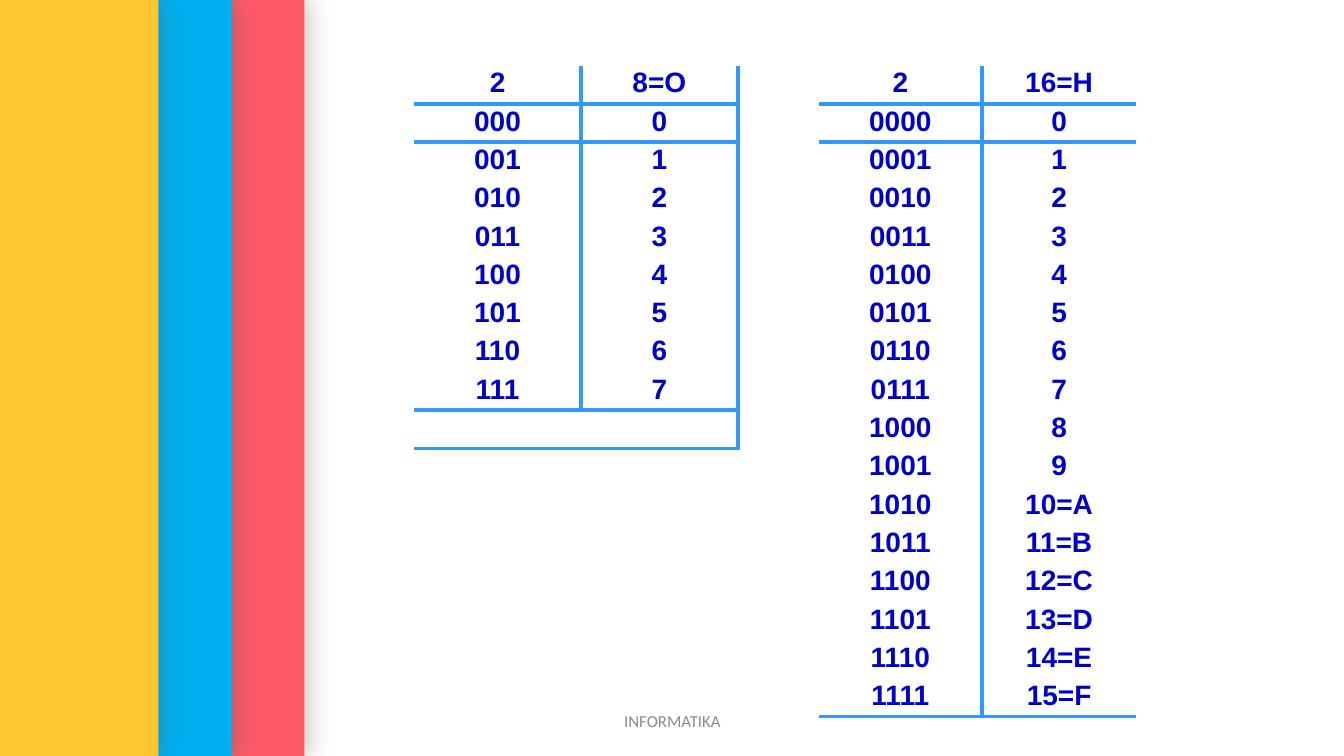
import dataclasses

import pptx
import pptx.dml.color
import pptx.enum.shapes
import pptx.enum.text
import pptx.oxml
import pptx.oxml.ns
import pptx.util
from lxml import etree

Inches = pptx.util.Inches
Pt = pptx.util.Pt


@dataclasses.dataclass(frozen=True)
class Theme:
    coral: str = "FF5969"
    sky: str = "00B0F0"
    amber: str = "FEC630"
    shade: str = "595959"
    paper: str = "FFFFFF"
    digits: str = "0000CC"
    rule: str = "3399FF"
    caption: str = "8C8C8C"
    table_font: str = "Arial"
    caption_font: str = "Calibri"
    table_size: int = 20
    caption_size: int = 12
    rule_width: int = 3


THEME = Theme()
NO_GRID_STYLE = "{2D5ABB26-0587-4C30-8999-92F81FD0307C}"
COLUMN_WIDTHS = (1.65, 1.56, 0.8, 1.62, 1.53)
ROW_COUNT = 18
GAP_COLUMN = 2
GAP_LAST_ROW = 9


def rgb(value):
    return pptx.dml.color.RGBColor.from_string(value)


def add_span(para, text, font, size, color, bold=False):
    span = para.add_run()
    span.text = text
    span.font.name = font
    span.font.size = Pt(size)
    span.font.bold = bold
    span.font.color.rgb = rgb(color)


def add_band(page, left, width, height, color):
    band = page.shapes.add_shape(
        pptx.enum.shapes.MSO_SHAPE.RECTANGLE,
        Inches(left), 0, Inches(width), Inches(height))
    band.fill.solid()
    band.fill.fore_color.rgb = rgb(color)
    band.line.fill.background()
    band.shadow.inherit = False
    effects = band.fill._xPr.find(pptx.oxml.ns.qn("a:effectLst"))
    effects.append(pptx.oxml.parse_xml(
        f'<a:outerShdw {pptx.oxml.ns.nsdecls("a")} blurRad="{Pt(17)}" '
        f'dist="{Pt(3)}" dir="0" algn="l" rotWithShape="0">'
        f'<a:srgbClr val="{THEME.shade}"><a:alpha val="35000"/></a:srgbClr>'
        '</a:outerShdw>'))


def add_bands(page, height):
    add_band(page, -9.62, 12.64, height, THEME.coral)
    add_band(page, -8.58, 10.88, height, THEME.sky)
    add_band(page, -8.73, 10.3, height, THEME.amber)


def add_borders(cell, sides):
    properties = cell._tc.get_or_add_tcPr()
    for side in "LRTB":
        if side in sides:
            properties.append(pptx.oxml.parse_xml(
                f'<a:ln{side} {pptx.oxml.ns.nsdecls("a")} w="{Pt(THEME.rule_width)}">'
                f'<a:solidFill><a:srgbClr val="{THEME.rule}"/></a:solidFill>'
                f'</a:ln{side}>'))


def fill_code_columns(table, first_column, bits, codes):
    last_row = len(codes)
    pairs = [("2", codes[0])]
    pairs += [(f"{number:0{bits}b}", code) for number, code in enumerate(codes[1:])]
    for row in range(last_row + 1):
        horizontal = ""
        if row in (1, last_row):
            horizontal += "T"
        if row in (0, last_row - 1):
            horizontal += "B"
        for offset, vertical in enumerate("RL"):
            cell = table.cell(row, first_column + offset)
            add_borders(cell, horizontal + (vertical if row < last_row else ""))
            if row < last_row:
                para = cell.text_frame.paragraphs[0]
                para.alignment = pptx.enum.text.PP_ALIGN.CENTER
                add_span(para, pairs[row][offset], THEME.table_font,
                         THEME.table_size, THEME.digits, True)


def add_code_table(page, left, top, width, height):
    table = page.shapes.add_table(
        ROW_COUNT, len(COLUMN_WIDTHS), Inches(left), Inches(top),
        Inches(width), Inches(height)).table
    table.first_row = False
    table.horz_banding = False
    style = table._tbl.tblPr.find(pptx.oxml.ns.qn("a:tableStyleId"))
    style.text = NO_GRID_STYLE
    for column, column_width in zip(table.columns, COLUMN_WIDTHS):
        column.width = Inches(column_width)
    for row in table.rows:
        row.height = Inches(height / ROW_COUNT)
    octal = ["8=O"] + [str(number) for number in range(8)]
    hexadecimal = ["16=H"] + [str(number) for number in range(10)]
    hexadecimal += [f"{number}={number:X}" for number in range(10, 16)]
    fill_code_columns(table, 0, 3, octal)
    fill_code_columns(table, GAP_COLUMN + 1, 4, hexadecimal)
    for cell in table.iter_cells():
        cell.margin_left = cell.margin_right = Inches(0.04)
        cell.margin_top = cell.margin_bottom = Inches(0.02)
        cell.fill.solid()
        cell.fill.fore_color.rgb = rgb(THEME.paper)
    table.cell(0, GAP_COLUMN).merge(table.cell(GAP_LAST_ROW, GAP_COLUMN))


def add_caption(page, left, top, width, height):
    box = page.shapes.add_textbox(
        Inches(left), Inches(top), Inches(width), Inches(height))
    frame = box.text_frame
    frame.word_wrap = True
    frame.vertical_anchor = pptx.enum.text.MSO_ANCHOR.MIDDLE
    para = frame.paragraphs[0]
    para.alignment = pptx.enum.text.PP_ALIGN.CENTER
    add_span(para, "INFORMATIKA", THEME.caption_font,
             THEME.caption_size, THEME.caption)


def main():
    deck = pptx.Presentation()
    deck.slide_width = Inches(13.33)
    deck.slide_height = Inches(7.5)
    page = deck.slides.add_slide(deck.slide_layouts[6])
    add_bands(page, 7.5)
    add_code_table(page, 4.11, 0.65, 7.16, 6.84)
    add_caption(page, 4.42, 6.95, 4.5, 0.4)
    deck.save("out.pptx")


if __name__ == "__main__":
    main()
